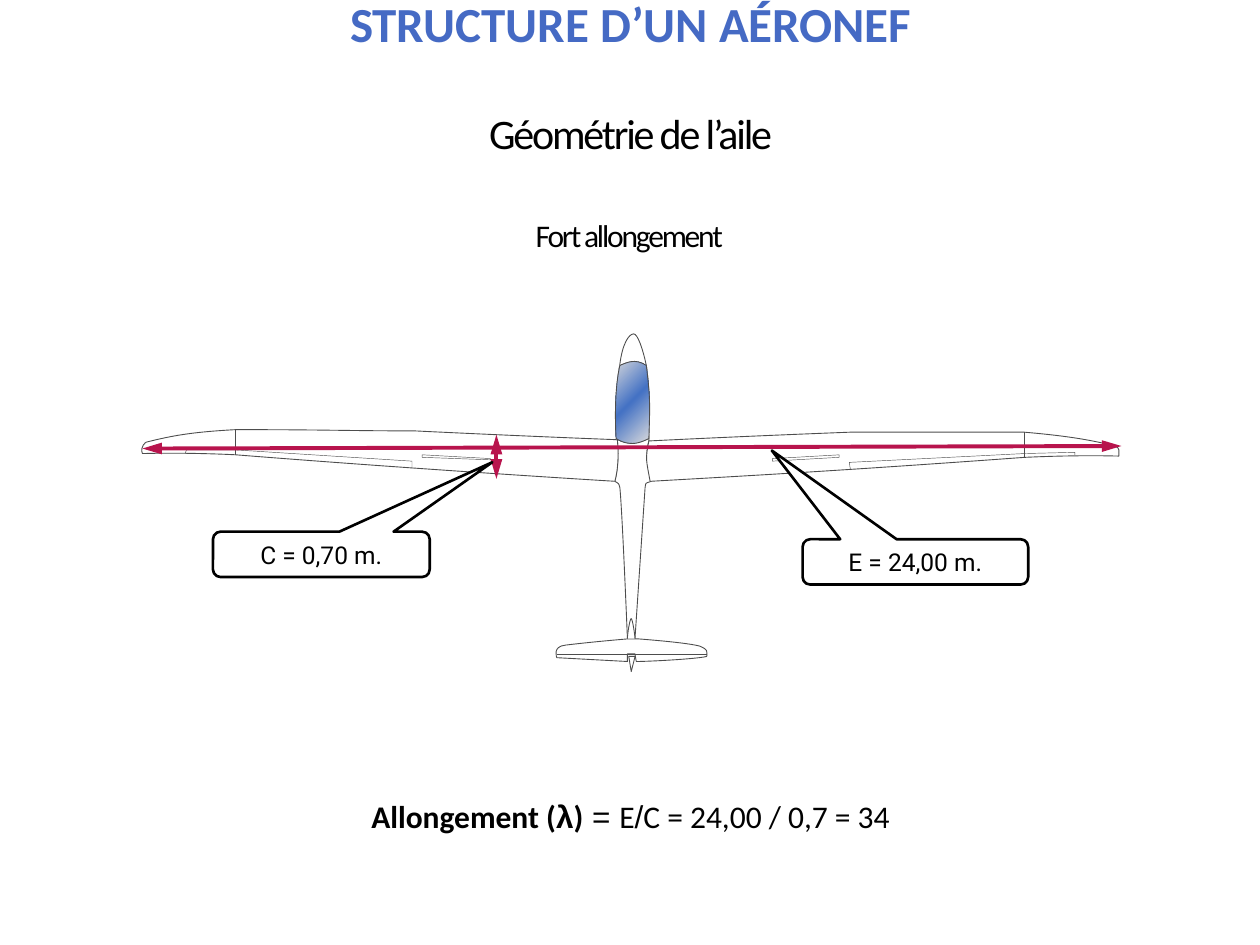
"""Build the slide on the high aspect ratio of a glider wing."""
import copy

import pptx
import pptx.dml.color
import pptx.enum.shapes
import pptx.enum.text
import pptx.oxml
import pptx.oxml.ns
import pptx.util


def paint(target, colour):
    if hasattr(target, "solid"):
        target.solid()
        target = target.fore_color
    target.rgb = pptx.dml.color.RGBColor.from_string(colour)


def add_line(shapes, ends, colour, width):
    line = shapes.add_connector(
        pptx.enum.shapes.MSO_CONNECTOR.STRAIGHT, *(round(end * unit) for end in ends))
    paint(line.line.color, colour)
    line.line.width = pptx.util.Pt(width)
    line._element.spPr.append(pptx.oxml.parse_xml(
        f'<a:effectLst {pptx.oxml.ns.nsdecls("a")}/>'))
    return line


BLACK, WHITE, GREY, RED = "000000", "FFFFFF", "4D4D4D", "B8144D"
CENTER = pptx.enum.text.PP_ALIGN.CENTER
GROW = pptx.enum.text.MSO_AUTO_SIZE.SHAPE_TO_FIT_TEXT

presentation = pptx.Presentation()
presentation.slide_width = pptx.util.Inches(10)
presentation.slide_height = pptx.util.Inches(7.5)
unit = presentation.slide_width / 1000
slide = presentation.slides.add_slide(presentation.slide_layouts[5])

fuselage = [
    (498, 507), (498, 507, 494, 408, 492, 387), (491, 383, 491, 384, 488, 382),
    (492, 366, 490, 350, 490, 350), (486, 320, 492, 289, 492, 289),
    (494, 273, 499, 265, 503, 265), (506, 265, 510, 276, 513, 290),
    (515, 304, 516, 320, 515, 350), (511, 365, 516, 375, 517, 382),
    (511, 384, 513, 383, 512, 387), (508, 447, 504, 507, 504, 507), (498, 507)]
right_wing = [
    (888, 362), (850, 361, 814, 363, 813, 363), (662, 374, 586, 378, 516, 382),
    (513, 365, 512, 365, 515, 350), (595, 346, 675, 343, 675, 343),
    (727, 343, 741, 343, 813, 343), (847, 346, 865, 349, 885, 354),
    (889, 356, 888, 357, 888, 362)]
left_wing = [
    (113, 360), (151, 359, 187, 361, 187, 361), (338, 373, 488, 382, 488, 382),
    (488, 382, 492, 370, 490, 349), (410, 346, 329, 342, 329, 342),
    (277, 342, 260, 341, 187, 341), (151, 343, 136, 346, 116, 351),
    (116, 351, 111, 354, 113, 360)]
left_tip = (187, 361, 187, 341)
left_aileron = [(147, 360), (148, 357), (186, 357), (327, 366), (327, 372)]
left_airbrake = [(335, 363), (335, 361), (389, 364), (390, 365), (335, 363)]
right_tip = (813, 363, 813, 343)
right_aileron = [(853, 361), (853, 359), (813, 360), (674, 367), (675, 373)]
right_airbrake = [(666, 363), (666, 361), (613, 364), (613, 366), (666, 363)]
tailplane = [
    (442, 522), (442, 522, 438, 513, 449, 512), (474, 509, 499, 507, 499, 507),
    (506, 507), (506, 507, 547, 510, 556, 513), (562, 516, 561, 516, 561, 521),
    (553, 523, 515, 525, 505, 525), (504, 519), (498, 519), (498, 525), (442, 522)]
rudder = [(499, 521), (501, 533), (504, 521), (499, 521)]
fin = [(504, 507), (504, 504, 502, 491, 501, 491), (500, 491, 498, 503, 498, 507)]
elevator_hinge = [(442, 519), (561, 519)]
canopy = [
    (489, 348), (489, 348, 494, 352, 502, 352), (508, 352, 515, 348, 515, 348),
    (516, 320, 516, 315, 513, 290), (504, 284, 497, 288, 492, 290),
    (488, 307, 488, 332, 489, 348)]

glider = slide.shapes.add_group_shape()
for outline, width, filled in (
        (fuselage, 0.5, True), (right_wing, 0.5, True), (left_wing, 0.5, True),
        (left_tip, 0.25, False), (left_aileron, 0.25, False),
        (left_airbrake, 0.25, False), (right_tip, 0.25, False),
        (right_aileron, 0.25, False), (right_airbrake, 0.25, False),
        (tailplane, 0.5, True), (rudder, 0.5, True), (fin, 0.5, True),
        (elevator_hinge, 0.25, True), (canopy, 0.5, True)):
    if isinstance(outline, tuple):
        add_line(glider.shapes, outline, GREY, width)
        continue
    points = [
        (segment[index] * unit, segment[index + 1] * unit)
        for segment in outline for index in range(0, len(segment), 2)]
    builder = glider.shapes.build_freeform(*points[0])
    builder.add_line_segments(points[1:], close=outline[0] == outline[-1][-2:])
    part = builder.convert_to_shape()
    steps = iter(part._element.findall(".//" + pptx.oxml.ns.qn("a:lnTo")))
    for segment in outline[1:]:
        step = next(steps)
        if len(segment) == 6:
            step.tag = pptx.oxml.ns.qn("a:cubicBezTo")
            for extra in (next(steps), next(steps)):
                step.append(extra[0])
                extra.getparent().remove(extra)
    part.shadow.inherit = False
    paint(part.line.color, GREY)
    part.line.width = pptx.util.Pt(width)
    if filled:
        paint(part.fill, WHITE)
    else:
        part.fill.background()

part.fill.gradient()
part.fill.gradient_angle = 315
stop_list = part._element.spPr.find(".//" + pptx.oxml.ns.qn("a:gsLst"))
stop_list.insert(1, copy.deepcopy(stop_list[0]))
for stop, position, colour in zip(
        part.fill.gradient_stops, (0, 0.5, 1), ("DDDDDD", "4472C4", "DDDDDD")):
    stop.position = position
    paint(stop.color, colour)

title = slide.shapes.title
title.left, title.top, title.width, title.height = (
    round(length * unit) for length in (42, 0, 917, 43))
frame = title.text_frame
frame.margin_left = frame.margin_top = frame.margin_right = frame.margin_bottom = 0
frame.vertical_anchor = pptx.enum.text.MSO_ANCHOR.TOP
frame.auto_size = GROW
frame.text = "STRUCTURE D’UN AÉRONEF"
paragraph = frame.paragraphs[0]
paragraph.alignment = CENTER
paragraph.line_spacing = 0.9
paragraph.space_before = pptx.util.Pt(0)
paragraph.space_after = pptx.util.Pt(6)
paragraph.font.name = "Calibri"
paragraph.font.size = pptx.util.Pt(28)
paragraph.font.bold = True
paint(paragraph.font.color, "456AC4")

for ends in ((113, 356, 890, 354), (394, 380, 394, 345)):
    arrow = add_line(slide.shapes, ends, RED, 2.25)
    for end in ("headEnd", "tailEnd"):
        arrow.line._get_or_add_ln().append(pptx.oxml.parse_xml(
            f'<a:{end} {pptx.oxml.ns.nsdecls("a")} type="triangle" w="med" len="lg"/>'))

for text, box, adjustments in (
        ("E = 24,00 m.", (637, 428, 179, 36), (-0.637, -2.458, 0.167)),
        ("C = 0,70 m.", (169, 422, 172, 36), (0.789, -2.032, 0.167))):
    callout = slide.shapes.add_shape(
        pptx.enum.shapes.MSO_SHAPE.ROUNDED_RECTANGULAR_CALLOUT,
        *(round(length * unit) for length in box))
    for index, adjustment in enumerate(adjustments):
        callout.adjustments[index] = adjustment
    callout.shadow.inherit = False
    paint(callout.fill, WHITE)
    paint(callout.line.color, BLACK)
    callout.line.width = pptx.util.Pt(1.5)
    frame = callout.text_frame
    frame.margin_left = frame.margin_right = round(12 * unit)
    frame.margin_top = frame.margin_bottom = round(6 * unit)
    frame.vertical_anchor = pptx.enum.text.MSO_ANCHOR.MIDDLE
    frame.text = text
    paragraph = frame.paragraphs[0]
    paragraph.alignment = CENTER
    paragraph.font.name = "Roboto"
    paragraph.font.size = pptx.util.Pt(14)
    paint(paragraph.font.color, BLACK)

formula = (
    ("Allongement (", "Calibri", True), ("λ", "Arial", True), (")", "Calibri", True),
    (" = ", "Arial", False), ("E", "Calibri", False), ("/", "Arial", False),
    ("C = 24,00 / 0,7 = 34", "Calibri", False))
for box, inset, size, line_spacing, tracking, runs in (
        ((26, 628, 949, 40), 5, 18, 1.0, 0, formula),
        ((328, 175, 343, 28), 0, 18, 0.9, -125, [("Fort allongement", "Calibri", False)]),
        ((42, 90, 917, 37), 0, 24, 0.9, -125, [("Géométrie de l’aile", "Calibri", False)])):
    label = slide.shapes.add_textbox(*(round(length * unit) for length in box))
    frame = label.text_frame
    frame.word_wrap = True
    frame.auto_size = GROW
    frame.margin_left = frame.margin_right = round(2 * inset * unit)
    frame.margin_top = frame.margin_bottom = round(inset * unit)
    paragraph = frame.paragraphs[0]
    paragraph.alignment = CENTER
    paragraph.line_spacing = line_spacing
    paragraph.font.size = pptx.util.Pt(size)
    paint(paragraph.font.color, BLACK)
    for text, font_name, bold in runs:
        run = paragraph.add_run()
        run.text = text
        run.font.name = font_name
        run.font.bold = bold
        if tracking:
            run._r.get_or_add_rPr().set("spc", str(tracking))

presentation.save("out.pptx")
